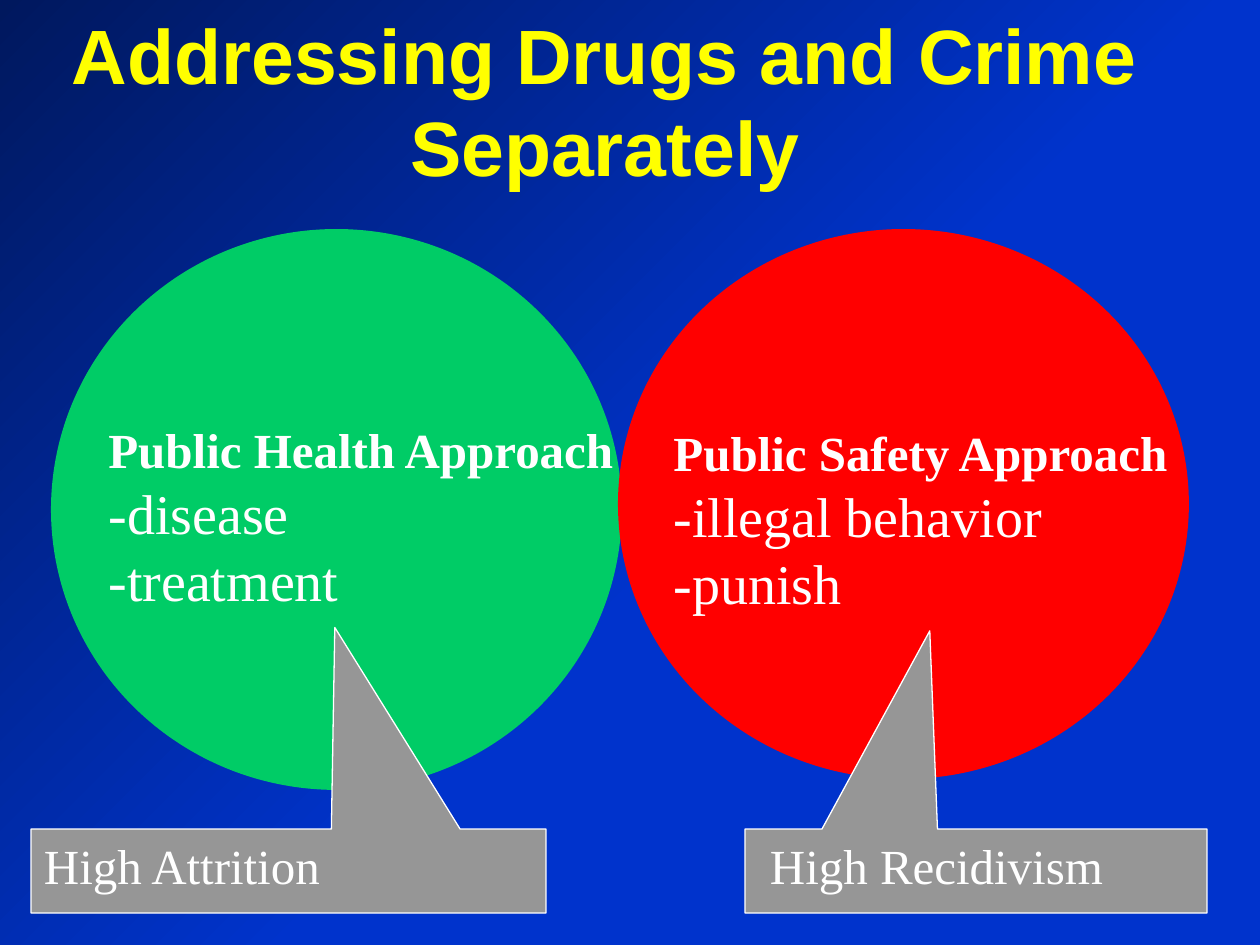
from dataclasses import dataclass

from lxml.etree import SubElement
from pptx import Presentation
from pptx.dml.color import RGBColor as Rgb
from pptx.enum.shapes import MSO_SHAPE as Shape
from pptx.enum.text import MSO_ANCHOR as Anchor, MSO_AUTO_SIZE as Fit, PP_ALIGN as Align
from pptx.oxml.ns import qn
from pptx.util import Emu, Pt

SCALE = 914400 / 126


def px(*nums):
    return [Emu(round(n * SCALE)) for n in nums]


@dataclass(frozen=True)
class Theme:
    deep: str = "00185E"
    blue: str = "0033CC"
    gold: str = "FFFF00"
    green: str = "00CC66"
    red: str = "FF0000"
    gray: str = "969696"
    white: str = "FFFFFF"
    head: str = "Arial"
    body: str = "Times New Roman"
    big: int = 44
    mid: int = 32
    small: int = 28


class Deck:
    """Build the styled elements of the current slide."""

    def __init__(self, theme):
        self.theme = theme
        self.prs = Presentation()
        self.prs.slide_width, self.prs.slide_height = px(1260, 945)
        self.slide = self.prs.slides.add_slide(self.prs.slide_layouts[5])

    def ground(self):
        fill = self.slide.background.fill
        fill.gradient()
        stops = zip(fill.gradient_stops, (0.44, 1), (self.theme.blue, self.theme.deep))
        for stop, place, color in stops:
            stop.position = place
            stop.color.rgb = Rgb.from_string(color)
        grad = self.slide.element.find(".//" + qn("a:gradFill"))
        grad.remove(grad.find(qn("a:lin")))
        way = SubElement(grad, qn("a:path"), path="circle")
        SubElement(way, qn("a:fillToRect"), l="100000", t="100000")

    def label(self, para, text, size, bold=False, **extra):
        run = para.add_run()
        run.text = text
        look = {"name": self.theme.body, "size": Pt(size), "bold": bold}
        for key, value in (look | extra).items():
            setattr(run.font, key, value)
        run.font.color.rgb = Rgb.from_string(self.theme.white)
        return run

    def title(self, box, text):
        shape = self.slide.shapes.title
        shape.left, shape.top, shape.width, shape.height = px(*box)
        frame = shape.text_frame
        for key, value in {"auto_size": Fit.NONE, "vertical_anchor": Anchor.MIDDLE}.items():
            setattr(frame, key, value)
        para = frame.paragraphs[0]
        para.alignment = Align.CENTER
        run = self.label(para, text, self.theme.big, True, name=self.theme.head)
        run.font.color.rgb = Rgb.from_string(self.theme.gold)

    def shape(self, kind, box, fill, line, width):
        shape = self.slide.shapes.add_shape(kind, *px(*box))
        shape.shadow.inherit = False
        shape.fill.solid()
        shape.fill.fore_color.rgb = Rgb.from_string(fill)
        shape.line.color.rgb = Rgb.from_string(line)
        shape.line.width = Pt(width)
        return shape

    def disc(self, box, color):
        self.shape(Shape.OVAL, box, color, color, 2.25)

    def points(self, box, head, items):
        frame = self.slide.shapes.add_textbox(*px(*box)).text_frame
        for key, value in {"word_wrap": False, "auto_size": Fit.SHAPE_TO_FIT_TEXT}.items():
            setattr(frame, key, value)
        self.label(frame.paragraphs[0], head, self.theme.small, True)
        for item in items:
            self.label(frame.add_paragraph(), item, self.theme.mid)

    def callout(self, box, tip, text, inset):
        shape = self.shape(Shape.RECTANGULAR_CALLOUT, box, self.theme.gray, self.theme.white, 0.75)
        shape.adjustments[0], shape.adjustments[1] = tip
        frame = shape.text_frame
        for key, value in {"vertical_anchor": Anchor.TOP, "margin_left": px(inset)[0]}.items():
            setattr(frame, key, value)
        para = frame.paragraphs[0]
        para.alignment = Align.LEFT
        self.label(para, text, self.theme.small)

    def save(self):
        self.prs.save("out.pptx")


def main():
    theme = Theme()
    deck = Deck(theme)
    deck.ground()
    deck.title((33, 21, 1144, 158), "Addressing Drugs and Crime Separately")
    deck.disc((53, 231, 567, 557), theme.green)
    deck.disc((620, 231, 567, 546), theme.red)
    deck.points((96, 413, 551, 211), "Public Health Approach", ("-disease", "-treatment"))
    deck.points((661, 416, 525, 208), "Public Safety Approach", ("-illegal behavior", "-punish"))
    deck.callout((31, 829, 515, 84), (0.09, -2.9), "High Attrition", 13)
    deck.callout((745, 829, 462, 84), (-0.1, -2.86), "High Recidivism", 25)
    deck.save()


if __name__ == "__main__":
    main()
